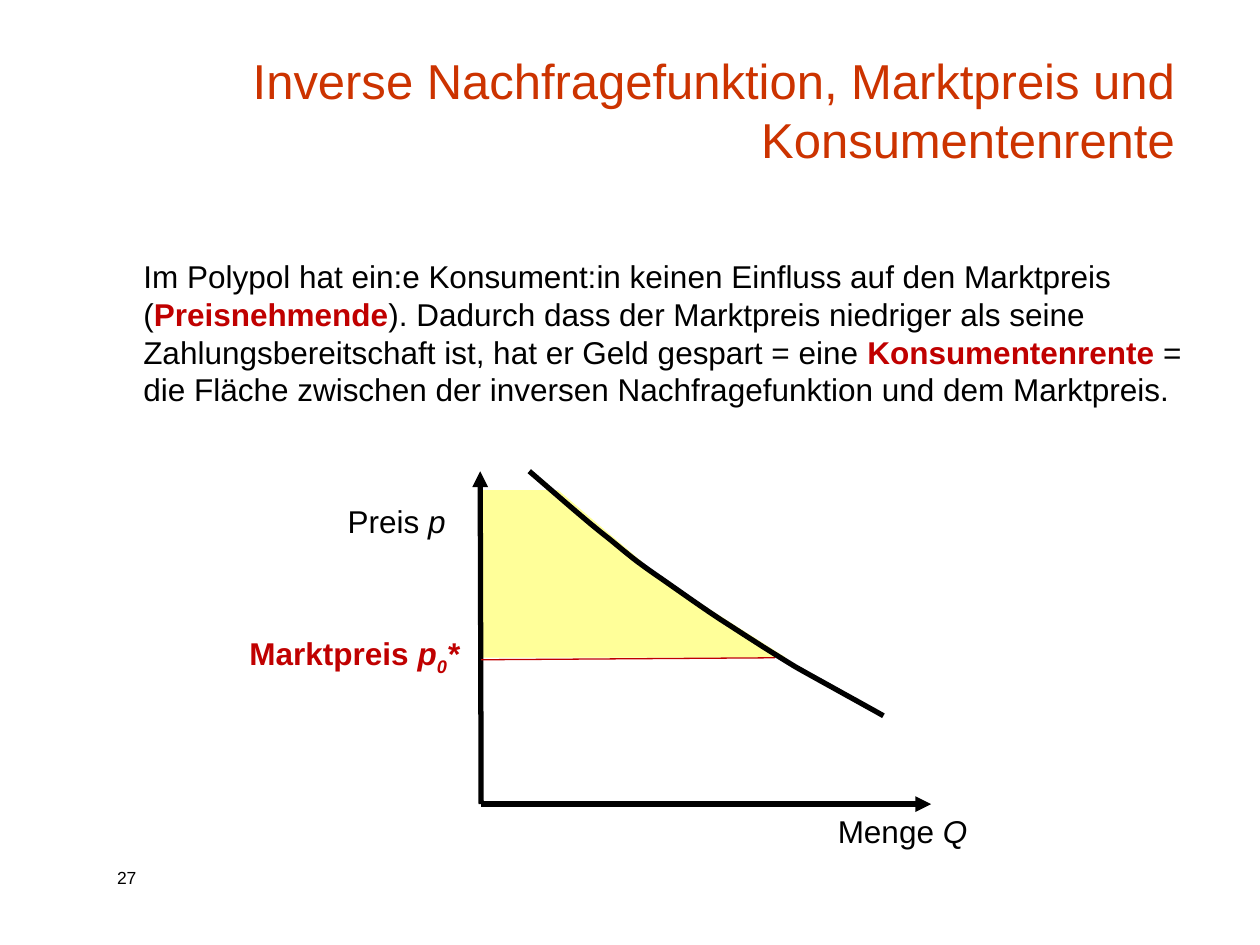
import dataclasses

import lxml.etree
import pptx
import pptx.dml.color
import pptx.enum.shapes
import pptx.enum.text
import pptx.oxml.ns
import pptx.util

Cm = pptx.util.Cm
Pt = pptx.util.Pt
qn = pptx.oxml.ns.qn
RGB = pptx.dml.color.RGBColor.from_string
Align = pptx.enum.text.PP_ALIGN
Anchor = pptx.enum.text.MSO_ANCHOR


@dataclasses.dataclass(frozen=True)
class Theme:
    font: str = "Arial"
    ink: str = "000000"
    heading: str = "CC3300"
    accent: str = "C00000"
    surplus: str = "FFFF99"
    heading_size: int = 28
    body_size: int = 18
    number_size: int = 10
    axis_width: float = 3
    price_width: float = 0.75


theme = Theme()
presentation = pptx.Presentation()
presentation.slide_width = Cm(25.4)
presentation.slide_height = Cm(19.05)
slide = presentation.slides.add_slide(presentation.slide_layouts[6])
shapes = slide.shapes


def add_text(box, runs, size, inset=(0, 0), align=Align.LEFT, anchor=Anchor.TOP):
    frame = shapes.add_textbox(*[Cm(length) for length in box]).text_frame
    frame.word_wrap = True
    frame.vertical_anchor = anchor
    frame.margin_left = frame.margin_right = Cm(inset[0])
    frame.margin_top = frame.margin_bottom = Cm(inset[1])
    paragraph = frame.paragraphs[0]
    paragraph.alignment = align
    for wording, color, bold, italic, baseline in runs:
        run = paragraph.add_run()
        run.text = wording
        run.font.name = theme.font
        run.font.size = Pt(size)
        run.font.color.rgb = RGB(color)
        run.font.bold = bold
        run.font.italic = italic
        if baseline:
            run._r.get_or_add_rPr().set("baseline", str(baseline))


def add_outline(points, closed):
    corners = [(Cm(x), Cm(y)) for x, y in points]
    builder = shapes.build_freeform(*corners[0])
    builder.add_line_segments(corners[1:], close=closed)
    outline = builder.convert_to_shape()
    outline.shadow.inherit = False
    return outline


padding = (0.25, 0.13)
plain = (theme.ink, False, False, 0)
symbol = (theme.ink, False, True, 0)
key_term = (theme.accent, True, False, 0)
key_symbol = (theme.accent, True, True, 0)

add_text((2.11, 17.35, 1.7, 0.66), [("27", *plain)], theme.number_size, padding)
add_text(
    (4.75, 1.07, 19.18, 2.46),
    [("Inverse Nachfragefunktion, Marktpreis und Konsumentenrente", theme.heading, False, False, 0)],
    theme.heading_size, padding, Align.RIGHT, Anchor.BOTTOM,
)

origin = (9.7, 16.21)
surplus = add_outline(
    [(9.7, 13.26), (15.85, 13.26), (13.36, 11.68), (11.25, 9.88), (9.7, 9.88)], True
)
surplus.fill.solid()
surplus.fill.fore_color.rgb = RGB(theme.surplus)
surplus.line.fill.background()

for box, runs in [
    ((7.01, 10.13, 3.3, 0.76), [("Preis", *plain), (" p", *symbol)]),
    ((16.89, 16.36, 2.79, 0.76), [("Menge", *plain), (" Q", *symbol)]),
    ((5.03, 12.78, 4.34, 0.86), [
        ("Marktpreis", *key_term),
        (" p", *key_symbol),
        ("0", theme.accent, True, True, -25000),
        ("*", *key_symbol),
    ]),
]:
    add_text(box, runs, theme.body_size)

for start, end, color, width, has_arrow in [
    (origin, (18.77, 16.21), theme.ink, theme.axis_width, True),
    (origin, (9.68, 9.5), theme.ink, theme.axis_width, True),
    ((9.7, 13.3), (15.62, 13.26), theme.accent, theme.price_width, False),
]:
    line = shapes.add_connector(
        pptx.enum.shapes.MSO_CONNECTOR.STRAIGHT, *[Cm(length) for length in start + end]
    )
    line.line.color.rgb = RGB(color)
    line.line.width = Pt(width)
    if has_arrow:
        lxml.etree.SubElement(line.line._get_or_add_ln(), qn("a:tailEnd"), type="triangle")
    lxml.etree.SubElement(line._element.spPr, qn("a:effectLst"))

demand_controls = [
    (17.81, 14.43), (17.53, 14.27), (16.56, 13.74), (16.03, 13.44),
    (15.52, 13.13), (15.21, 12.93), (14.73, 12.62),
    (14.25, 12.32), (13.59, 11.84), (13.18, 11.56),
    (12.78, 11.28), (12.73, 11.23), (12.29, 10.87),
    (11.86, 10.54), (11, 9.78), (10.67, 9.5),
]
steps = 8
demand_points = [demand_controls[0]]
for first in range(0, len(demand_controls) - 1, 3):
    bend = demand_controls[first:first + 4]
    for step in range(1, steps + 1):
        t = step / steps
        weights = ((1 - t) ** 3, 3 * t * (1 - t) ** 2, 3 * t ** 2 * (1 - t), t ** 3)
        demand_points.append(
            tuple(sum(w * point[axis] for w, point in zip(weights, bend)) for axis in (0, 1))
        )
demand = add_outline(demand_points, False)
demand.fill.background()
demand.line.color.rgb = RGB(theme.ink)
demand.line.width = Pt(theme.axis_width)

add_text(
    (2.64, 5.05, 21.67, 3.3),
    [
        ("Im Polypol hat ein:e Konsument:in keinen Einfluss auf den Marktpreis (", *plain),
        ("Preisnehmende", *key_term),
        ("). Dadurch dass der Marktpreis niedriger als seine Zahlungsbereitschaft ist, "
         "hat er Geld gespart = eine ", *plain),
        ("Konsumentenrente ", *key_term),
        ("= die Fläche zwischen der inversen Nachfragefunktion und dem Marktpreis.", *plain),
    ],
    theme.body_size, padding,
)

presentation.save("out.pptx")
